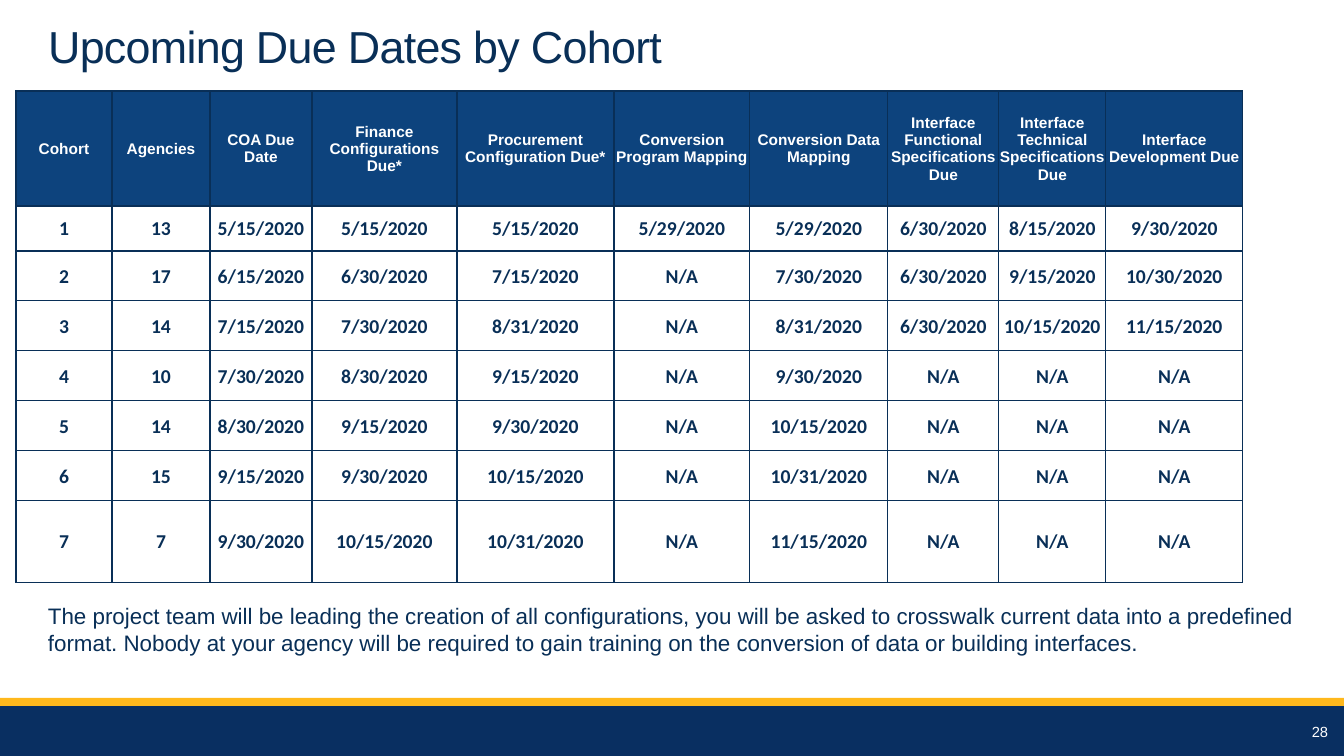
from lxml.etree import fromstring
from pptx import Presentation
from pptx.dml.color import RGBColor
from pptx.enum.shapes import MSO_SHAPE
from pptx.enum.text import MSO_ANCHOR, PP_ALIGN
from pptx.oxml.ns import nsdecls
from pptx.util import Pt

PX = 914400 / 100.8
NAVY, HEADER_BLUE, FOOTER_BLUE = "092F57", "0D437D", "092F61"
GOLD, WHITE = "FFB81C", "FFFFFF"

COLUMN_WIDTHS = [96, 98, 102, 145, 157, 136, 138, 111, 107, 137]
ROW_HEIGHTS = [115, 45, 50, 50, 50, 50, 50, 82]
HEADINGS = [
    "Cohort", "Agencies", "COA Due Date", "Finance Configurations Due*",
    "Procurement Configuration Due*", "Conversion Program Mapping",
    "Conversion Data Mapping", "Interface Functional Specifications Due",
    "Interface Technical Specifications Due", "Interface Development Due",
]
COHORTS = [
    ["1", "13", "5/15/2020", "5/15/2020", "5/15/2020", "5/29/2020",
     "5/29/2020", "6/30/2020", "8/15/2020", "9/30/2020"],
    ["2", "17", "6/15/2020", "6/30/2020", "7/15/2020", "N/A",
     "7/30/2020", "6/30/2020", "9/15/2020", "10/30/2020"],
    ["3", "14", "7/15/2020", "7/30/2020", "8/31/2020", "N/A",
     "8/31/2020", "6/30/2020", "10/15/2020", "11/15/2020"],
    ["4", "10", "7/30/2020", "8/30/2020", "9/15/2020", "N/A",
     "9/30/2020", "N/A", "N/A", "N/A"],
    ["5", "14", "8/30/2020", "9/15/2020", "9/30/2020", "N/A",
     "10/15/2020", "N/A", "N/A", "N/A"],
    ["6", "15", "9/15/2020", "9/30/2020", "10/15/2020", "N/A",
     "10/31/2020", "N/A", "N/A", "N/A"],
    ["7", "7", "9/30/2020", "10/15/2020", "10/31/2020", "N/A",
     "11/15/2020", "N/A", "N/A", "N/A"],
]
NOTE = ("The project team will be leading the creation of all configurations, "
        "you will be asked to crosswalk current data into a predefined format. "
        "Nobody at your agency will be required to gain training on the "
        "conversion of data or building interfaces.")


def px(length):
    return round(length * PX)


def rgb(color):
    return RGBColor.from_string(color)


def write(frame, text, size, color=NAVY, font="Arial", bold=False,
          align=PP_ALIGN.LEFT, anchor=MSO_ANCHOR.TOP):
    """Fill a text frame with one formatted paragraph and return it."""
    frame.word_wrap = True
    frame.vertical_anchor = anchor
    paragraph = frame.paragraphs[0]
    paragraph.alignment = align
    run = paragraph.add_run()
    run.text = text
    run.font.name = font
    run.font.size = Pt(size)
    run.font.bold = bold
    run.font.color.rgb = rgb(color)
    return paragraph


def add_band(slide, top, height, color):
    band = slide.shapes.add_shape(MSO_SHAPE.RECTANGLE, 0, px(top), px(1344), px(height))
    band.shadow.inherit = False
    band.fill.solid()
    band.fill.fore_color.rgb = rgb(color)
    band.line.fill.background()


def add_title(slide, text):
    title = slide.shapes.title
    title.left, title.top, title.width, title.height = map(px, (38, 22, 1279, 56))
    paragraph = write(title.text_frame, text, 32, anchor=MSO_ANCHOR.BOTTOM)
    paragraph.line_spacing = 0.85
    paragraph.runs[0].font._element.set("spc", "-50")


def add_text(slide, box, text, size, **text_format):
    textbox = slide.shapes.add_textbox(*map(px, box))
    write(textbox.text_frame, text, size, **text_format)


def outline(cell):
    properties = cell._tc.get_or_add_tcPr()
    for position, side in enumerate("LRTB"):
        properties.insert(position, fromstring(
            f'<a:ln{side} {nsdecls("a")} w="12700"><a:solidFill>'
            f'<a:srgbClr val="{NAVY}"/></a:solidFill></a:ln{side}>'))


def fill_cell(cell, text, is_heading):
    cell.margin_left = cell.margin_right = cell.margin_top = px(1)
    cell.margin_bottom = 0
    cell.vertical_anchor = MSO_ANCHOR.MIDDLE
    centred = {"bold": True, "align": PP_ALIGN.CENTER, "anchor": None}
    if is_heading:
        cell.fill.solid()
        cell.fill.fore_color.rgb = rgb(HEADER_BLUE)
        write(cell.text_frame, text, 11, color=WHITE, **centred)
    else:
        cell.fill.background()
        write(cell.text_frame, text, 14, font="Calibri", **centred)
    outline(cell)


def add_due_dates(slide):
    entries = [HEADINGS] + COHORTS
    due_dates = slide.shapes.add_table(
        len(entries), len(HEADINGS), px(16), px(91),
        px(sum(COLUMN_WIDTHS)), px(sum(ROW_HEIGHTS))).table
    due_dates.horz_banding = False
    for column, width in zip(due_dates.columns, COLUMN_WIDTHS):
        column.width = px(width)
    for index, (row, height) in enumerate(zip(due_dates.rows, ROW_HEIGHTS)):
        row.height = px(height)
        for cell, text in zip(row.cells, entries[index]):
            fill_cell(cell, text, is_heading=index == 0)


def main():
    presentation = Presentation()
    presentation.slide_width, presentation.slide_height = px(1344), px(756)
    slide = presentation.slides.add_slide(presentation.slide_layouts[5])
    add_band(slide, 706, 50, FOOTER_BLUE)
    add_band(slide, 698, 8, GOLD)
    add_title(slide, "Upcoming Due Dates by Cohort")
    add_text(slide, (1193, 712, 145, 40), "28", 10.5, color=WHITE,
             align=PP_ALIGN.RIGHT, anchor=MSO_ANCHOR.MIDDLE)
    add_due_dates(slide)
    add_text(slide, (38, 597, 1289, 64), NOTE, 16)
    presentation.save("out.pptx")


if __name__ == "__main__":
    main()
